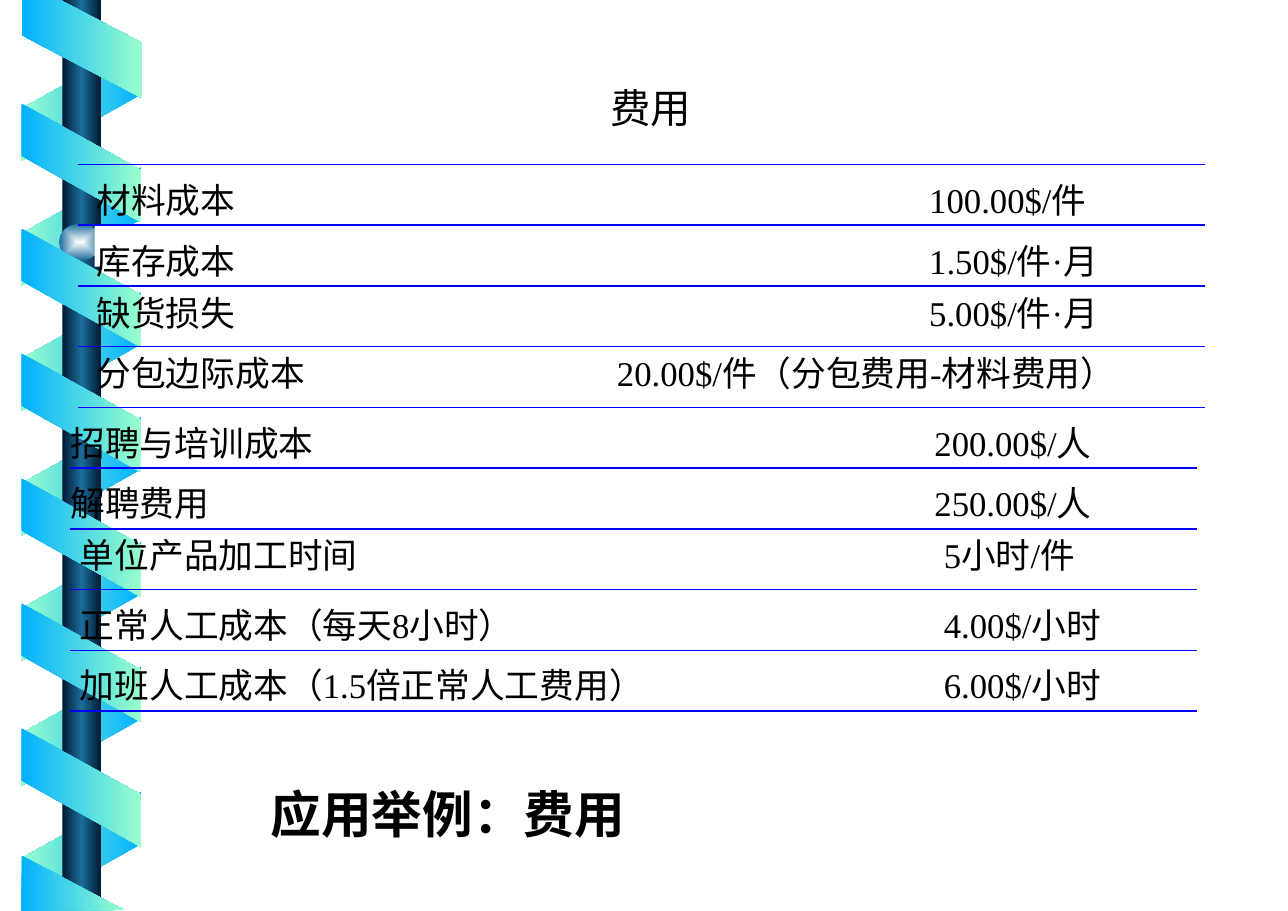
from lxml import etree
from pptx import Presentation
from pptx.dml.color import RGBColor
from pptx.enum.lang import MSO_LANGUAGE_ID as LANGUAGE
from pptx.enum.shapes import MSO_CONNECTOR, MSO_SHAPE
from pptx.enum.text import MSO_ANCHOR, PP_ALIGN
from pptx.oxml.ns import qn
from pptx.util import Inches, Pt

COLORS = {
    "white": "FFFFFF", "text": "000000", "rule": "0000FF",
    "ribbon_blue": "01B0FF", "ribbon_green": "99FFCC",
    "rod_dark": "001932", "rod_light": "1C6D9A", "bead": "FEFFFF",
}
RIBBON = [(0, "ribbon_blue"), (100, "ribbon_green")]


def paint(shape, stops, radial=False):
    """Fill with a left-to-right gradient, or one from the centre out."""
    shape.shadow.inherit = False
    shape.line.fill.background()
    shape.fill.gradient()
    gradient = shape._element.spPr.find(qn("a:gradFill"))
    gradient.set("rotWithShape", "0")
    for child in list(gradient):
        gradient.remove(child)
    stop_list = etree.SubElement(gradient, qn("a:gsLst"))
    for position, color in stops:
        stop = etree.SubElement(stop_list, qn("a:gs"), pos=str(position * 1000))
        etree.SubElement(stop, qn("a:srgbClr"), val=COLORS[color])
    if radial:
        center = etree.SubElement(gradient, qn("a:path"), path="shape")
        etree.SubElement(center, qn("a:fillToRect"), l="50000", t="50000", r="50000", b="50000")
    else:
        etree.SubElement(gradient, qn("a:lin"), ang="0", scaled="0")


def add_text(box, text, size, inset=(0.1, 0.05), anchor=MSO_ANCHOR.TOP,
             align=PP_ALIGN.LEFT, tab=None, font_name="Times New Roman", bold=False):
    left, top, width, height = map(Inches, box)
    frame = slide.shapes.add_textbox(left, top, width, height).text_frame
    side, end = map(Inches, inset)
    settings = {"word_wrap": True, "vertical_anchor": anchor, "margin_left": side,
                "margin_right": side, "margin_top": end, "margin_bottom": end}
    for name, value in settings.items():
        setattr(frame, name, value)
    paragraph = frame.paragraphs[0]
    paragraph.alignment = align
    if tab:
        tabs = etree.SubElement(paragraph._p.get_or_add_pPr(), qn("a:tabLst"))
        etree.SubElement(tabs, qn("a:tab"), pos=str(Inches(tab)), algn="l")
    run = paragraph.add_run()
    run.text = text
    font_values = {"name": font_name, "size": Pt(size), "bold": bold,
                   "language_id": LANGUAGE.SIMPLIFIED_CHINESE}
    for name, value in font_values.items():
        setattr(run.font, name, value)
    run.font.color.rgb = RGBColor.from_string(COLORS["text"])
    if font_name != "Times New Roman":
        etree.SubElement(run._r.rPr, qn("a:ea"), typeface=font_name)


presentation = Presentation()
presentation.slide_width = Inches(99 / 8)
presentation.slide_height = Inches(8.75)
slide = presentation.slides.add_slide(presentation.slide_layouts[6])
shapes = slide.shapes

# Ribbon winding round a rod: back turns, rod and bead, front turns
for first_top, count, rotation, behind in [(0.4, 7, 90, True), (0.99, 6, 270, False)]:
    for turn in range(count):
        ribbon = shapes.add_shape(MSO_SHAPE.PARALLELOGRAM, Inches(0.21),
                                  Inches(first_top + 1.2 * turn), Inches(1.14), Inches(1.15))
        ribbon.adjustments[0] = 0.56
        ribbon.rotation = rotation
        if behind:
            ribbon._element.spPr.xfrm.set("flipH", "1")
        paint(ribbon, RIBBON)
    if behind:
        rod = shapes.add_shape(MSO_SHAPE.RECTANGLE, Inches(0.6), 0, Inches(0.37), Inches(8.75))
        paint(rod, [(0, "rod_dark"), (50, "rod_light"), (100, "rod_dark")])
        bead = shapes.add_shape(MSO_SHAPE.OVAL, Inches(0.57), Inches(2.15), Inches(0.4), Inches(0.35))
        paint(bead, [(0, "bead"), (100, "rod_light")], radial=True)

ribbon_ends = [
    [(0.21, 0), (0.21, 0.34), (1.36, 0.94), (1.36, 0.41), (0.58, 0)],
    [(1.19, 8.74), (0.21, 8.22), (0.2, 8.75)],
]
for outline in ribbon_ends:
    points = [(Inches(x), Inches(y)) for x, y in outline]
    builder = shapes.build_freeform(*points[0])
    builder.add_line_segments(points[1:], close=True)
    paint(builder.convert_to_shape(), RIBBON)

band = shapes.add_shape(MSO_SHAPE.RECTANGLE, Inches(0.91), Inches(2.17), Inches(11.46), Inches(0.39))
band.shadow.inherit = False
band.fill.solid()
band.fill.fore_color.rgb = RGBColor.from_string(COLORS["white"])
band.line.fill.background()

# Cost list
add_text((4.42, 0.75, 3.67, 0.57), "费用", 28, align=PP_ALIGN.CENTER)

for row in range(10):
    left = 0.75 if row < 5 else 0.67
    y = Inches(1.58 + row * 7 / 12)
    rule = shapes.add_connector(MSO_CONNECTOR.STRAIGHT, Inches(left), y, Inches(left + 10.83), y)
    rule.line.color.rgb = RGBColor.from_string(COLORS["rule"])
    rule.line.width = Pt(1)
    etree.SubElement(rule._element.spPr, qn("a:effectLst"))

costs = [
    (0.83, 1.67, 8, "材料成本", "100.00$/件"),
    (0.83, 2.25, 8, "库存成本", "1.50$/件·月"),
    (0.83, 2.75, 8, "缺货损失", "5.00$/件·月"),
    (0.83, 3.33, 5, "分包边际成本", "20.00$/件（分包费用-材料费用）"),
    (0.58, 4, 8.3, "招聘与培训成本", "200.00$/人"),
    (0.58, 4.58, 8.3, "解聘费用", "250.00$/人"),
    (0.67, 5.08, 8.3, "单位产品加工时间", "5小时/件"),
    (0.67, 5.75, 8.3, "正常人工成本（每天8小时）", "4.00$/小时"),
    (0.67, 6.33, 8.3, "加班人工成本（1.5倍正常人工费用）", "6.00$/小时"),
]
for left, top, tab, label, amount in costs:
    add_text((left, top, 10.83, 0.5), f"{label}\t{amount}", 24, tab=tab)

add_text((2.48, 7.42, 5.85, 0.74), "应用举例：费用", 35, inset=(0.12, 0.06),
         anchor=MSO_ANCHOR.BOTTOM, font_name="Noto Sans CJK JP", bold=True)

presentation.save("out.pptx")
